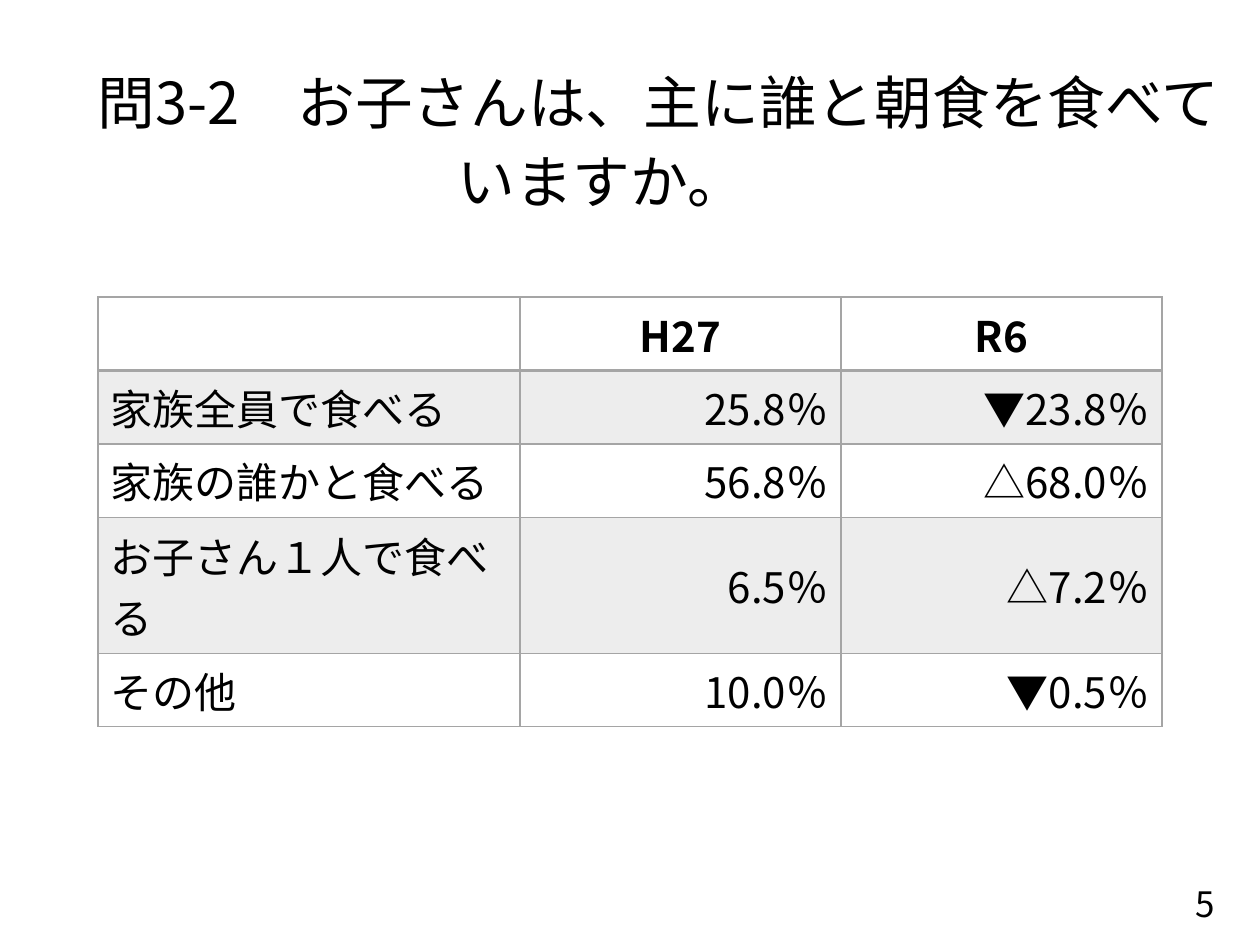
from typing import NamedTuple

from lxml import etree
from pptx import Presentation
from pptx import util as u
from pptx.dml.color import RGBColor
from pptx.enum import text
from pptx.oxml import ns

FONT = "Noto Sans CJK JP"
COLORS = {"text": "000000", "border": "A5A5A5", "band": "EDEDED", "plain": "FFFFFF"}
LEFT, CENTER, RIGHT = text.PP_ALIGN.LEFT, text.PP_ALIGN.CENTER, text.PP_ALIGN.RIGHT
ONE_LINE, TWO_LINES = 1.48, 2.74  # row heights in cm


class Box(NamedTuple):
    left: float
    top: float
    width: float
    height: float


class TitleLine(NamedTuple):
    words: str
    indent: float


class Answer(NamedTuple):
    cells: tuple[str, str, str]
    height: float = ONE_LINE


TITLE_LINES = [
    TitleLine("問3-2　お子さんは、主に誰と朝食を食べて", 1.16),
    TitleLine("いますか。", 8.41),
]
ROWS = [
    Answer(("", "H27", "R6")),
    Answer(("家族全員で食べる", "25.8％", "▼23.8％")),
    Answer(("家族の誰かと食べる", "56.8％", "△68.0％")),
    Answer(("お子さん１人で食べる", "6.5％", "△7.2％"), TWO_LINES),
    Answer(("その他", "10.0％", "▼0.5％")),
]
COLUMN_WIDTHS = [8.5, 6.47, 6.47]


def add_run(p, words: str, size: float, bold: bool = False) -> None:
    r = p.add_run()
    r.text = words
    r.font.size, r.font.bold, r.font.name = u.Pt(size), bold, FONT
    r.font.color.rgb = RGBColor.from_string(COLORS["text"])
    # East Asian typeface
    etree.SubElement(r.font._element, ns.qn("a:ea"), typeface=FONT)


def add_text_frame(s, box: Box, anchor):
    tf = s.shapes.add_textbox(*map(u.Cm, box)).text_frame
    tf.word_wrap = True
    tf.vertical_anchor = anchor
    return tf


def set_borders(cell, header: bool, below_header: bool) -> None:
    tc_pr = cell._tc.get_or_add_tcPr()
    widths = {"lnL": 1, "lnR": 1, "lnT": 2 if below_header else 1, "lnB": 2 if header else 1}
    for i, (side, width) in enumerate(widths.items()):
        ln = etree.Element(ns.qn(f"a:{side}"), w=str(u.Pt(width)))
        fill = etree.SubElement(ln, ns.qn("a:solidFill"))
        etree.SubElement(fill, ns.qn("a:srgbClr"), val=COLORS["border"])
        tc_pr.insert(i, ln)


def add_title(s) -> None:
    tf = add_text_frame(s, Box(0.56, 1.04, 25.68, 2.62), text.MSO_ANCHOR.TOP)
    for i, line in enumerate(TITLE_LINES):
        p = tf.add_paragraph() if i else tf.paragraphs[0]
        p.alignment, p.line_spacing = LEFT, u.Pt(45)
        p._p.get_or_add_pPr().set("marL", str(u.Cm(line.indent)))
        add_run(p, line.words, 33)


def add_answers(s) -> None:
    box = Box(1.98, 5.99, sum(COLUMN_WIDTHS), sum(answer.height for answer in ROWS))
    table = s.shapes.add_table(len(ROWS), len(COLUMN_WIDTHS), *map(u.Cm, box)).table
    table.first_row = table.horz_banding = False
    for column, width in zip(table.columns, COLUMN_WIDTHS):
        column.width = u.Cm(width)
    for i, answer in enumerate(ROWS):
        table.rows[i].height = u.Cm(answer.height)
        for j, words in enumerate(answer.cells):
            cell = table.cell(i, j)
            cell.vertical_anchor = text.MSO_ANCHOR.MIDDLE
            cell.fill.solid()
            cell.fill.fore_color.rgb = RGBColor.from_string(COLORS["band" if i % 2 else "plain"])
            set_borders(cell, i == 0, i == 1)
            p = cell.text_frame.paragraphs[0]
            p.alignment = CENTER if i == 0 else RIGHT if j else LEFT
            if words:
                add_run(p, words, 24, bold=i == 0)


def add_page_number(s) -> None:
    tf = add_text_frame(s, Box(19.02, 17.71, 5.72, 1.02), text.MSO_ANCHOR.MIDDLE)
    p = tf.paragraphs[0]
    p.alignment = RIGHT
    add_run(p, "5", 20)


def main() -> None:
    prs = Presentation()
    prs.slide_width, prs.slide_height = u.Cm(25.4), u.Cm(19.05)
    s = prs.slides.add_slide(prs.slide_layouts[6])
    add_page_number(s)
    add_title(s)
    add_answers(s)
    prs.save("out.pptx")


if __name__ == "__main__":
    main()
